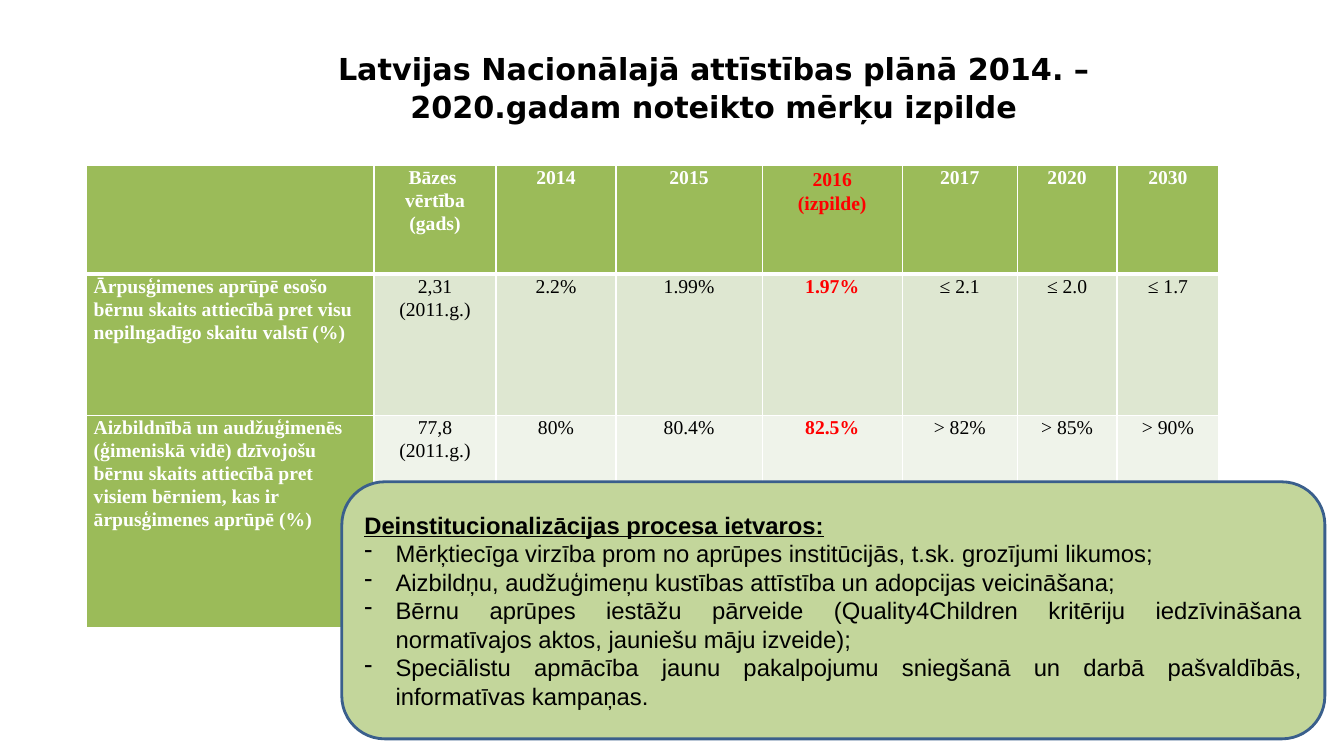
"""Build a slide on how the goals of the Latvian National Development Plan were met."""
import pptx
import pptx.dml.color
import pptx.enum.shapes
import pptx.enum.text
import pptx.oxml
import pptx.oxml.ns
import pptx.util
from pptx.util import Inches

RGBColor = pptx.dml.color.RGBColor
ALIGN = pptx.enum.text.PP_ALIGN
ANCHOR = pptx.enum.text.MSO_ANCHOR

BLACK = RGBColor(0x00, 0x00, 0x00)
WHITE = RGBColor(0xFF, 0xFF, 0xFF)
RED = RGBColor(0xFF, 0x00, 0x00)
GREEN = RGBColor(0x9B, 0xBB, 0x59)
BAND_DARK = RGBColor(0xDE, 0xE7, 0xD1)
BAND_LIGHT = RGBColor(0xEF, 0xF3, 0xEA)
PANEL_FILL = RGBColor(0xC3, 0xD6, 0x9B)
PANEL_LINE = RGBColor(0x3A, 0x5F, 0x8C)

RESULT_COLUMN = 4
COLUMN_WIDTHS = [2.85, 1.21, 1.19, 1.45, 1.39, 1.14, 0.99, 1.01]
ROW_HEIGHTS = [1.08, 1.4, 2.11]
ROW_FILLS = [GREEN, BAND_DARK, BAND_LIGHT]
GOALS = [
    ["", "Bāzes \nvērtība\n(gads)", "2014", "2015", "2016\n(izpilde)", "2017", "2020", "2030"],
    ["Ārpusģimenes aprūpē esošo bērnu skaits attiecībā pret visu nepilngadīgo skaitu valstī (%)",
     "2,31\n(2011.g.)", "2.2%", "1.99%", "1.97%", "≤ 2.1", "≤ 2.0", "≤ 1.7"],
    ["Aizbildnībā un audžuģimenēs\n(ģimeniskā vidē) dzīvojošu bērnu skaits attiecībā pret "
     "visiem bērniem, kas ir ārpusģimenes aprūpē (%)",
     "77,8\n(2011.g.)", "80%", "80.4%", "82.5%", "> 82%", "> 85%", "> 90%"],
]
MEASURES = [
    "Mērķtiecīga virzība prom no aprūpes institūcijās, t.sk. grozījumi likumos;",
    "Aizbildņu, audžuģimeņu kustības attīstība un adopcijas veicināšana;",
    "Bērnu aprūpes iestāžu pārveide (Quality4Children kritēriju iedzīvināšana "
    "normatīvajos aktos, jauniešu māju izveide);",
    "Speciālistu apmācība jaunu pakalpojumu sniegšanā un darbā pašvaldībās, "
    "informatīvas kampaņas.",
]


def write_para(para, text, font, size, color=BLACK, bold=False, underline=False,
               align=ALIGN.CENTER, spacing=None, bullet=None):
    """Fill one paragraph with formatted text."""
    para.alignment = align
    if spacing:
        para.line_spacing = spacing
    if bullet:
        properties = para._p.get_or_add_pPr()
        properties.set("marL", str(Inches(0.31)))
        properties.set("indent", str(-Inches(0.31)))
        mark = pptx.oxml.parse_xml(
            f'<a:buChar {pptx.oxml.ns.nsdecls("a")} char="{bullet}"/>')
        properties.append(mark)
    span = para.add_run()
    span.text = text
    span.font.name = font
    span.font.size = pptx.util.Pt(size)
    span.font.color.rgb = color
    span.font.bold = bold
    span.font.underline = underline


def add_title(page):
    """Add the slide heading."""
    box = page.shapes.add_textbox(Inches(2.99), Inches(0.42), Inches(8.18), Inches(1.13))
    box.text_frame.word_wrap = True
    write_para(box.text_frame.paragraphs[0],
               "Latvijas Nacionālajā attīstības plānā 2014. – 2020.gadam noteikto mērķu izpilde",
               "DejaVu Sans", 21.6, bold=True, spacing=1.07)


def set_borders(cell, top, bottom):
    """Draw white cell borders with the given top and bottom widths."""
    for side, points in (("L", 1), ("R", 1), ("T", top), ("B", bottom)):
        cell._tc.get_or_add_tcPr().append(pptx.oxml.parse_xml(
            f'<a:ln{side} {pptx.oxml.ns.nsdecls("a")} w="{pptx.util.Pt(points)}">'
            f'<a:solidFill><a:srgbClr val="{WHITE}"/></a:solidFill></a:ln{side}>'))


def fill_cell(cell, text, row, column):
    """Style and fill one table cell by its place in the grid."""
    heading = row == 0 or column == 0
    result = column == RESULT_COLUMN
    set_borders(cell, 3 if row == 1 else 1, 3 if row == 0 else 1)
    cell.fill.solid()
    cell.fill.fore_color.rgb = GREEN if heading else ROW_FILLS[row]
    cell.margin_left = cell.margin_right = Inches(0 if result else 0.07)
    cell.margin_top = cell.margin_bottom = Inches(0)
    if not text:
        return
    color = RED if result else WHITE if heading else BLACK
    frame = cell.text_frame
    for index, line in enumerate(text.split("\n")):
        para = frame.add_paragraph() if index else frame.paragraphs[0]
        write_para(para, line, "Times New Roman", 14, color=color, bold=heading or result,
                   align=ALIGN.CENTER if row == 0 or column else ALIGN.LEFT,
                   spacing=1.15 if result and row == 0 else 1.07)


def add_goal_table(page):
    """Add the table of goals by year."""
    table = page.shapes.add_table(
        len(ROW_HEIGHTS), len(COLUMN_WIDTHS), Inches(0.86), Inches(1.64),
        Inches(sum(COLUMN_WIDTHS)), Inches(sum(ROW_HEIGHTS))).table
    for column, width in zip(table.columns, COLUMN_WIDTHS):
        column.width = Inches(width)
    for row, height in zip(table.rows, ROW_HEIGHTS):
        row.height = Inches(height)
    for row, texts in enumerate(GOALS):
        for column, text in enumerate(texts):
            fill_cell(table.cell(row, column), text, row, column)


def add_measures_panel(page):
    """Add the rounded panel that lists the measures taken."""
    panel = page.shapes.add_shape(
        pptx.enum.shapes.MSO_SHAPE.ROUNDED_RECTANGLE,
        Inches(3.39), Inches(4.78), Inches(9.75), Inches(2.55))
    panel.shadow.inherit = False
    panel.fill.solid()
    panel.fill.fore_color.rgb = PANEL_FILL
    panel.line.color.rgb = PANEL_LINE
    panel.line.width = pptx.util.Pt(2)
    frame = panel.text_frame
    frame.word_wrap = True
    frame.vertical_anchor = ANCHOR.MIDDLE
    write_para(frame.paragraphs[0], "Deinstitucionalizācijas procesa ietvaros:", "Arial", 17,
               bold=True, underline=True, align=ALIGN.JUSTIFY)
    for measure in MEASURES:
        write_para(frame.add_paragraph(), measure, "Arial", 17,
                   align=ALIGN.JUSTIFY, bullet="-")


def main():
    """Build and save the deck."""
    deck = pptx.Presentation()
    deck.slide_width = Inches(13.33)
    deck.slide_height = Inches(7.5)
    page = deck.slides.add_slide(deck.slide_layouts[6])
    add_title(page)
    add_goal_table(page)
    add_measures_panel(page)
    deck.save("out.pptx")


if __name__ == "__main__":
    main()
